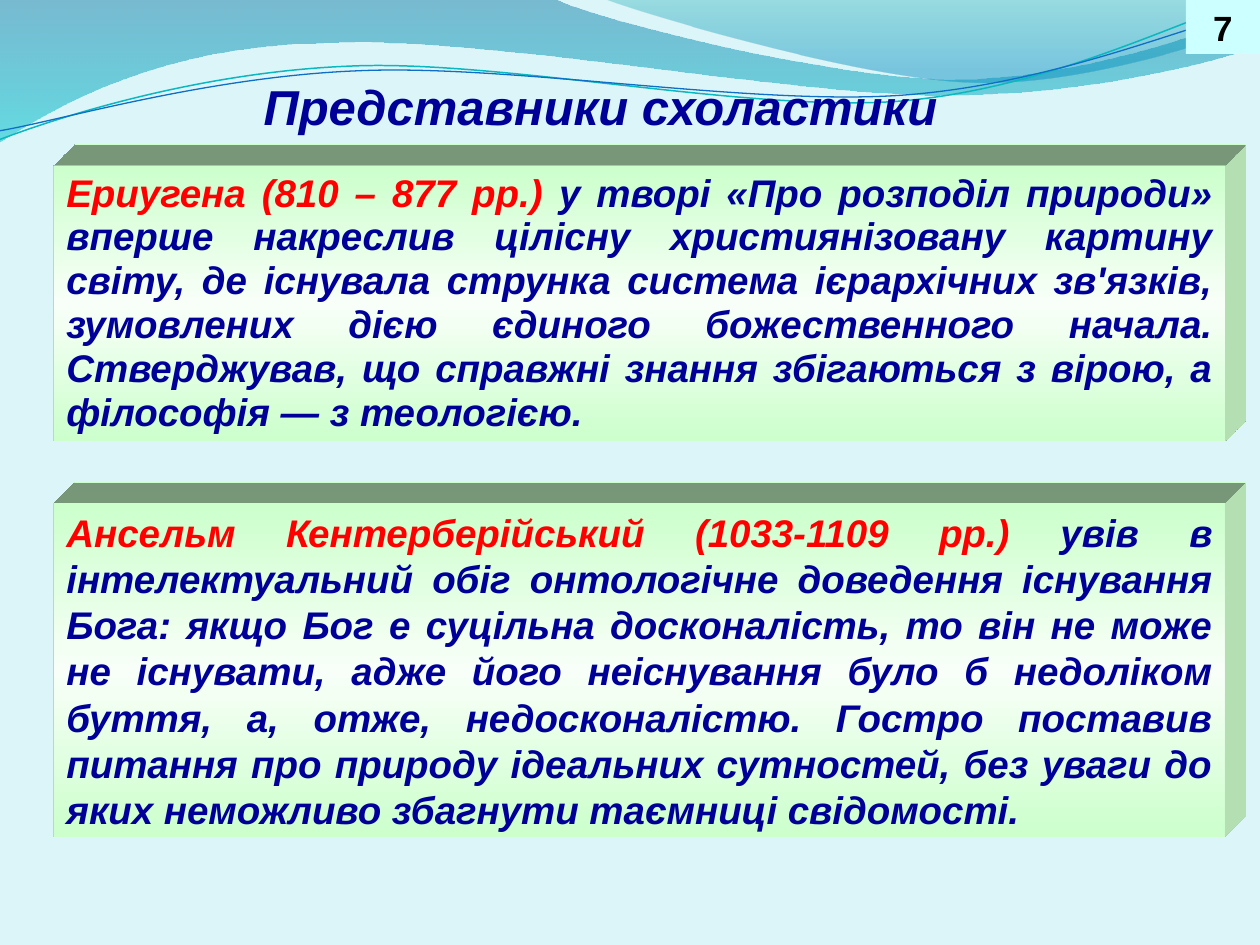
from lxml.etree import SubElement
from pptx import Presentation
from pptx.dml.color import RGBColor
from pptx.enum.shapes import MSO_SHAPE as SHAPE
from pptx.enum.text import MSO_ANCHOR as ANCHOR, PP_ALIGN as ALIGN
from pptx.oxml.ns import qn
from pptx.util import Pt

SCALE = 914400 / 126
FONT = "Arial"
NAVY, RED = "000099", "FF0000"
PANEL_STOPS = [(0, "CCFFCC", 100), (50, "F8FFF8", 100), (100, "CCFFCC", 100)]
RIPPLE_TILT = -2.7

# Outlines: a start point, then segments of one point (line) or three (Bezier).
WAVES = [
    ((0, 0), [
        [(554, -1)],
        [(600, 21), (837, 79), (955, 79)],
        [(1075, 79), (1207, 33), (1260, 11)],
        [(1261, 45)],
        [(1239, 55), (1096, 96), (940, 95)],
        [(784, 95), (481, 35), (324, 43)],
        [(163, 45), (58, 105), (-1, 142)],
    ], [(0, "0074A1", 45), (100, "00C6CF", 55)]),
    ((604, -1), [
        [(641, 14), (859, 78), (969, 82)],
        [(1079, 87), (1211, 40), (1260, 26)],
        [(1260, 0)],
    ], [(0, "00A1A9", 30), (80, "008BBF", 45)]),
]
RIPPLES = [
    ((-3, 110), [
        [(58, 90), (199, 52), (350, 53)],
        [(499, 53), (745, 118), (896, 114)],
        [(1049, 109), (1184, 45), (1260, 27)],
    ], "0AB8BF", 0.85),
    ((-2, 101), [
        [(57, 94), (207, 57), (357, 58)],
        [(509, 58), (750, 112), (902, 108)],
        [(1052, 104), (1188, 52), (1262, 38)],
    ], "0F6FC6", 0.75),
]

ERIUGENA = [
    ("Ериугена (810 – 877 рр.)", RED),
    (" у творі «Про розподіл природи» вперше накреслив цілісну християнізовану "
     "картину світу, де існувала струнка система ієрархічних зв'язків, зумовлених "
     "дією єдиного божественного начала. Стверджував, що справжні знання "
     "збігаються з вірою, а філософія — з теологією. ", NAVY),
]
ANSELM = [
    ("Ансельм Кентерберійський (1033-1109 рр.) ", RED),
    ("увів в інтелектуальний обіг онтологічне доведення існування Бога: якщо Бог "
     "е суцільна досконалість, то він не може не існувати, адже його неіснування "
     "було б недоліком буття, а, отже, недосконалістю. Гостро поставив питання "
     "про природу ідеальних сутностей, без уваги до яких неможливо збагнути "
     "таємниці свідомості.", NAVY),
]


def px(length):
    return round(length * SCALE)


def color(hex_value):
    return RGBColor.from_string(hex_value)


def fill_solid(shape, hex_value):
    shape.fill.solid()
    shape.fill.fore_color.rgb = color(hex_value)


def fill_gradient(shape, stops):
    """Fill from top to bottom with (position %, colour, opacity %) stops."""
    shape.fill.gradient()
    shape.fill.gradient_angle = 270
    stop_list = shape._element.spPr.find(qn("a:gradFill")).find(qn("a:gsLst"))
    for old in list(stop_list):
        stop_list.remove(old)
    for position, hex_value, opacity in stops:
        stop = SubElement(stop_list, qn("a:gs"), pos=str(position * 1000))
        tint = SubElement(stop, qn("a:srgbClr"), val=hex_value)
        if opacity < 100:
            SubElement(tint, qn("a:alpha"), val=str(opacity * 1000))


def extrude(shape, hex_value):
    """Give the shape a depth running up and to the right."""
    properties = shape._element.spPr
    scene = SubElement(properties, qn("a:scene3d"))
    SubElement(scene, qn("a:camera"), prst="legacyObliqueTopRight")
    SubElement(scene, qn("a:lightRig"), rig="legacyFlat3", dir="b")
    solid = SubElement(properties, qn("a:sp3d"), extrusionH="430200",
                       prstMaterial="legacyMatte")
    depth_color = SubElement(solid, qn("a:extrusionClr"))
    SubElement(depth_color, qn("a:srgbClr"), val=hex_value)


def add_outline(slide, start, segments, close=True):
    """Build the outline through all points, then bend each triple into a curve."""
    builder = slide.shapes.build_freeform(*map(px, start))
    points = [(px(x), px(y)) for segment in segments for x, y in segment]
    builder.add_line_segments(points, close=close)
    shape = builder.convert_to_shape()
    steps = iter(list(shape._element.spPr.iter(qn("a:lnTo"))))
    for segment in segments:
        first, *others = [next(steps) for _ in segment]
        if others:
            first.tag = qn("a:cubicBezTo")
            for step in others:
                first.append(step[0])
                step.getparent().remove(step)
    shape.shadow.inherit = False
    shape.line.fill.background()
    return shape


def add_rectangle(slide, x, y, width, height):
    shape = slide.shapes.add_shape(SHAPE.RECTANGLE, *map(px, (x, y, width, height)))
    shape.shadow.inherit = False
    shape.line.fill.background()
    return shape


def write(shape, runs, size, align, italic=True, spacing=None):
    frame = shape.text_frame
    frame.vertical_anchor = ANCHOR.MIDDLE
    paragraph = frame.paragraphs[0]
    paragraph.alignment = align
    paragraph.line_spacing = spacing
    for text, hex_value in runs:
        run = paragraph.add_run()
        run.text = text
        font = run.font
        font.name, font.size, font.bold, font.italic = FONT, Pt(size), True, italic
        font.color.rgb = color(hex_value)


def add_waves(slide):
    for start, segments, stops in WAVES:
        fill_gradient(add_outline(slide, start, segments), stops)
    for start, segments, hex_value, width in RIPPLES:
        ripple = add_outline(slide, start, segments, close=False)
        ripple.rotation = RIPPLE_TILT
        ripple.fill.background()
        ripple.line.color.rgb = color(hex_value)
        ripple.line.width = Pt(width)


def add_panel(slide, x, y, width, height, runs, spacing=None):
    panel = add_rectangle(slide, x, y, width, height)
    fill_gradient(panel, PANEL_STOPS)
    extrude(panel, "CCFFCC")
    write(panel, runs, 22, ALIGN.JUSTIFY, spacing=spacing)


def place_title(slide, x, y, width, height):
    title = slide.shapes.title
    title.left, title.top, title.width, title.height = map(px, (x, y, width, height))
    title.text_frame.word_wrap = False
    write(title, [("Представники схоластики", NAVY)], 28, ALIGN.CENTER)
    slide.shapes._spTree.append(title._element)  # in front of the waves


def add_page_number(slide, x, y, width, height):
    corner = add_rectangle(slide, x, y, width, height)
    fill_solid(corner, "CCFFFF")
    write(corner, [("7", "000000")], 20, ALIGN.CENTER, italic=False)


def main():
    deck = Presentation()
    deck.slide_width, deck.slide_height = px(1260), px(945)
    slide = deck.slides.add_slide(deck.slide_layouts[5])
    fill_solid(slide.background, "DBF5F9")
    add_waves(slide)
    add_panel(slide, 54, 166, 1171, 275, ERIUGENA, spacing=0.95)
    add_panel(slide, 54, 503, 1171, 335, ANSELM)
    place_title(slide, 174, 76, 853, 59)
    add_page_number(slide, 1186, 0, 74, 54)
    deck.save("out.pptx")


if __name__ == "__main__":
    main()
